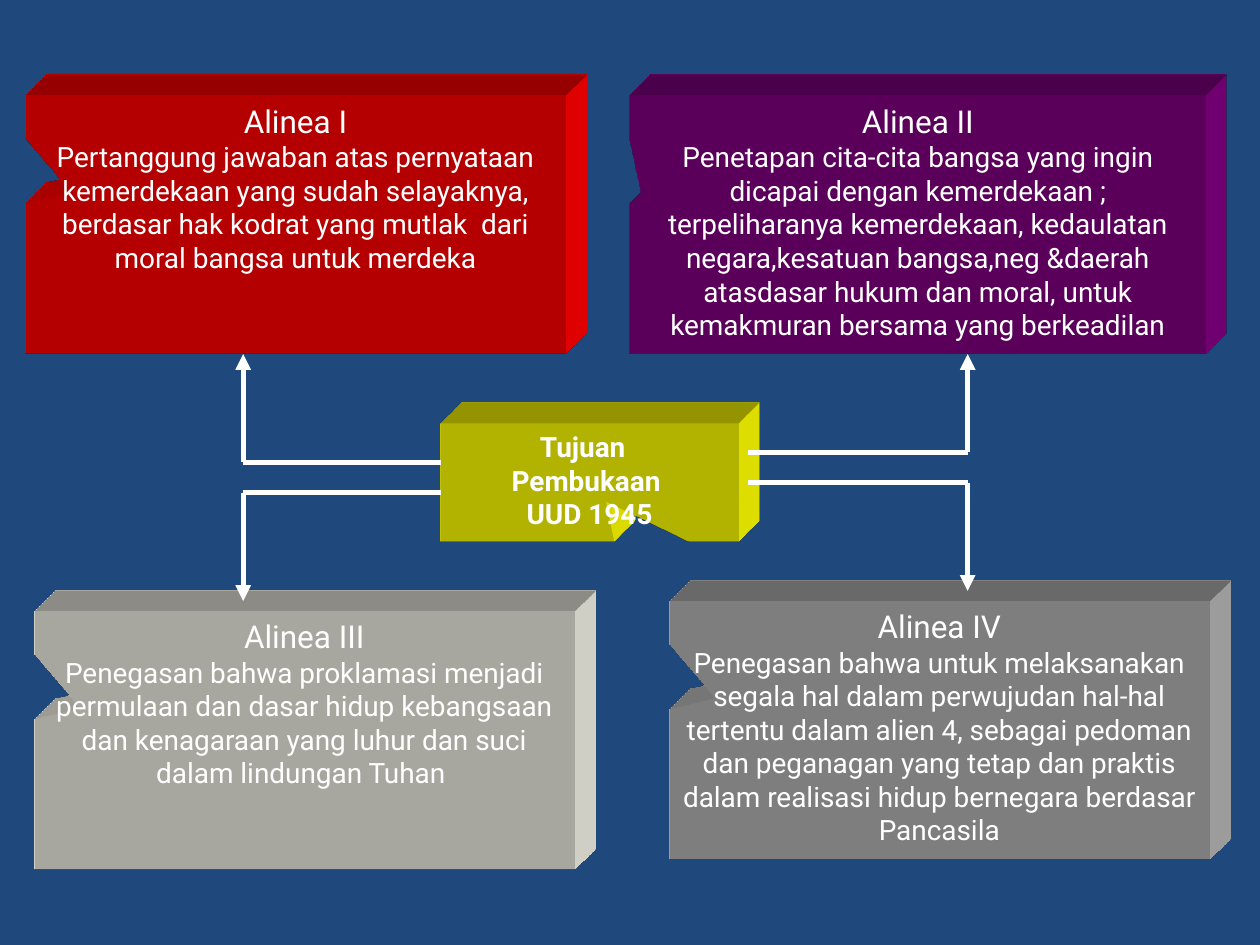
from typing import NamedTuple
from lxml.etree import SubElement as Sub
from pptx import Presentation
from pptx.dml.color import RGBColor as Rgb
from pptx.enum.shapes import MSO_CONNECTOR as Link, MSO_SHAPE as Form
from pptx.enum.text import MSO_ANCHOR as Anchor, PP_ALIGN as Align
from pptx.oxml.ns import qn
from pptx.util import Inches, Pt

NAVY = Rgb(0x1F, 0x49, 0x7D)
WHITE = Rgb(0xFF, 0xFF, 0xFF)
YELLOW = Rgb(0xFF, 0xFF, 0x00)
RED = Rgb(0xFF, 0x00, 0x00)
PURPLE = Rgb(0x80, 0x00, 0x80)
CREAM = Rgb(0xEE, 0xEC, 0xE1)
GREY = Rgb(0xB2, 0xB2, 0xB2)

FONT = "Roboto"
WIDTH, HEIGHT = Inches(10), Inches(7.5)
COL, ROW = WIDTH / 100, HEIGHT / 75
WIDE, TALL = 42.9, 20.5
NOTCH = (-0.415, -0.126)


class Box(NamedTuple):
    left: float
    top: float
    color: Rgb
    lines: list[str]
    width: float = WIDE
    height: float = TALL
    notch: tuple[float, float] = NOTCH
    head: int = 18
    bold: bool = False


class Bend(NamedTuple):
    start: float
    turn: float
    level: float
    tip: float


BOXES = [
    Box(35, 33.6, YELLOW, ["Tujuan  ", "Pembukaan ", "UUD 1945"],
        23.6, 9.4, (0.056, 0.16), 16, True),
    Box(2, 7.6, RED, [
        "Alinea I",
        "Pertanggung jawaban atas pernyataan kemerdekaan yang sudah selayaknya, "
        "berdasar hak kodrat yang mutlak  dari moral bangsa untuk merdeka"]),
    Box(50, 7.6, PURPLE, [
        "Alinea II",
        "Penetapan cita-cita bangsa yang ingin dicapai dengan kemerdekaan ; "
        "terpeliharanya kemerdekaan, kedaulatan negara,kesatuan bangsa,neg &daerah "
        "atasdasar hukum dan moral, untuk kemakmuran bersama yang berkeadilan"],
        width=45.7, notch=(-0.48, -0.126)),
    Box(2.7, 48.5, CREAM, [
        "Alinea III",
        "Penegasan bahwa proklamasi menjadi permulaan dan dasar hidup kebangsaan "
        "dan kenagaraan yang luhur dan suci dalam lindungan Tuhan "]),
    Box(53.1, 47.7, GREY, [
        "Alinea IV",
        "Penegasan bahwa untuk melaksanakan segala hal dalam perwujudan hal-hal "
        "tertentu dalam alien 4, sebagai pedoman dan peganagan yang tetap dan "
        "praktis dalam realisasi hidup bernegara berdasar Pancasila"]),
]

BENDS = [
    Bend(35, 19.3, 39.1, 47.7),
    Bend(35, 19.3, 36.7, 28.1),
    Bend(59.4, 76.8, 35.9, 28.1),
    Bend(59.4, 76.8, 38.3, 46.9),
]


def extrude(shape, color: Rgb) -> None:
    props = shape._element.spPr
    scene = Sub(props, qn("a:scene3d"))
    Sub(scene, qn("a:camera"), prst="legacyObliqueTopRight")
    Sub(scene, qn("a:lightRig"), rig="legacyFlat3", dir="b")
    solid = Sub(props, qn("a:sp3d"), extrusionH="430200", prstMaterial="legacyMatte")
    for side in ("a:bevelT", "a:bevelB"):
        Sub(solid, qn(side), w="13500", h="13500", prst="angle")
    Sub(Sub(solid, qn("a:extrusionClr")), qn("a:srgbClr"), val=str(color))


def draw_box(slide, box: Box) -> None:
    shape = slide.shapes.add_shape(
        Form.RECTANGULAR_CALLOUT, int(box.left * COL), int(box.top * ROW),
        int(box.width * COL), int(box.height * ROW))
    for i, share in enumerate(box.notch):
        shape.adjustments[i] = share
    shape.fill.solid()
    shape.fill.fore_color.rgb = box.color
    shape.line.fill.background()
    shape.shadow.inherit = False
    extrude(shape, box.color)
    frame = shape.text_frame
    frame.word_wrap = True
    frame.vertical_anchor = Anchor.TOP
    frame.text = "\n".join(box.lines)
    for i, para in enumerate(frame.paragraphs):
        para.alignment = Align.CENTER
        for run in para.runs:
            run.font.name = FONT
            run.font.size = Pt(16 if i else box.head)
            run.font.bold = box.bold
            run.font.color.rgb = WHITE


def draw_line(slide, start: tuple[float, float], end: tuple[float, float],
              arrow: bool = False) -> None:
    line = slide.shapes.add_connector(
        Link.STRAIGHT, int(start[0] * COL), int(start[1] * ROW),
        int(end[0] * COL), int(end[1] * ROW))
    line.line.color.rgb = WHITE
    line.line.width = Pt(3)
    if arrow:
        Sub(line.line._get_or_add_ln(), qn("a:tailEnd"), type="triangle")
    Sub(line._element.spPr, qn("a:effectLst"))


def draw_bend(slide, bend: Bend) -> None:
    knee = (bend.turn, bend.level)
    draw_line(slide, (bend.start, bend.level), knee)
    draw_line(slide, knee, (bend.turn, bend.tip), arrow=True)


def main() -> None:
    deck = Presentation()
    deck.slide_width, deck.slide_height = WIDTH, HEIGHT
    slide = deck.slides.add_slide(deck.slide_layouts[6])
    slide.background.fill.solid()
    slide.background.fill.fore_color.rgb = NAVY
    for box in BOXES:
        draw_box(slide, box)
    for bend in BENDS:
        draw_bend(slide, bend)
    deck.save("out.pptx")


if __name__ == "__main__":
    main()
